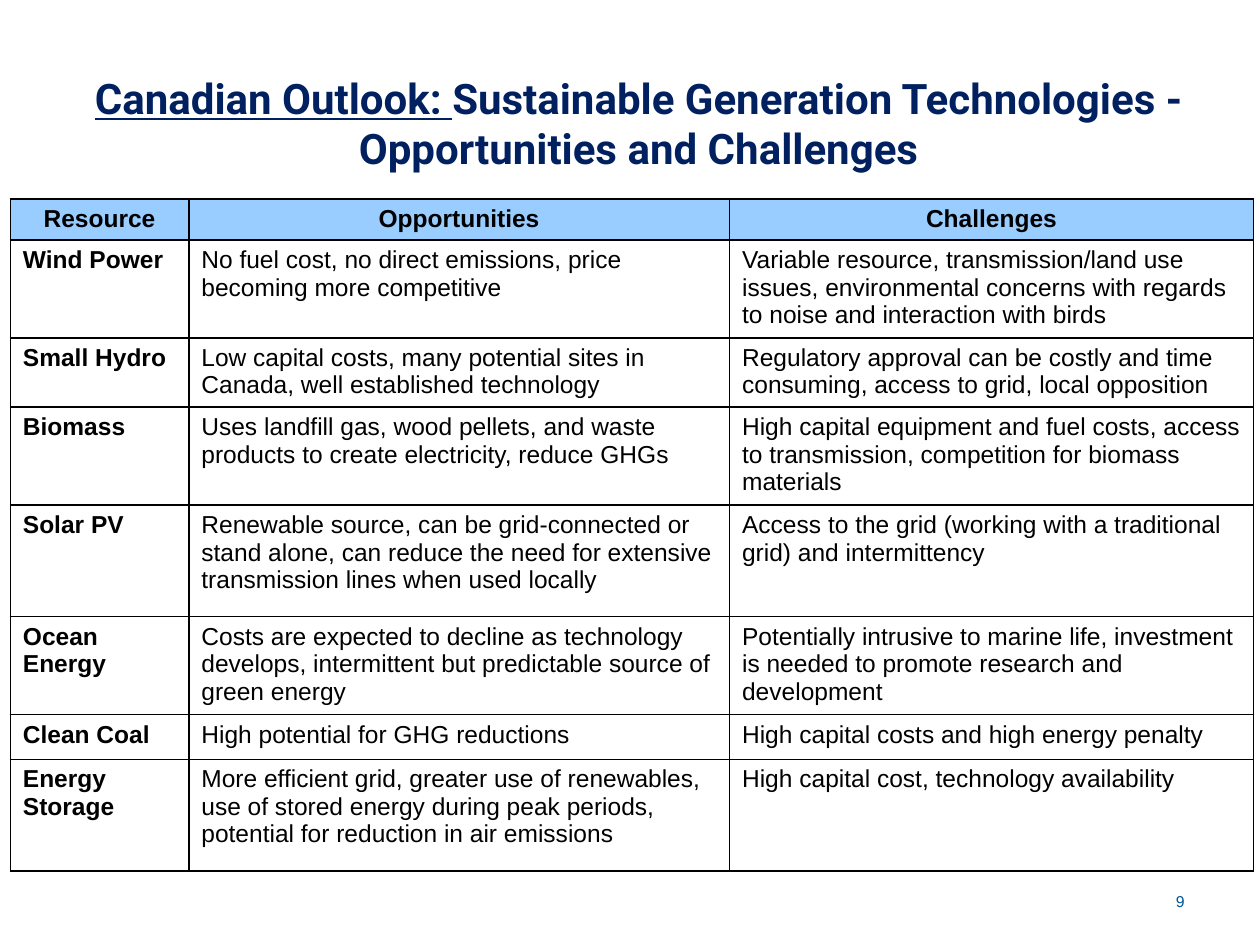
"""Build a slide with a table of sustainable generation technologies."""
from pptx import Presentation, util as u
from pptx.dml.color import RGBColor
from pptx.enum import text as t
from pptx.oxml import parse_xml
from pptx.oxml.ns import nsdecls

Pt = u.Pt
THEME = {
    "navy": "002060", "blue": "005595", "black": "000000", "head": "99CCFF",
    "sans": "Arial", "display": "Roboto",
    "title": 24, "body": 14, "small": 9, "line": 1,
}
LEAD = "Canadian Outlook: "
TITLE = ("Sustainable Generation Technologies -", "Opportunities and Challenges")
PAGE = "9"
HEAD = ("Resource", "Opportunities", "Challenges")
ROWS = [
    ("Wind Power",
     "No fuel cost, no direct emissions, price becoming more competitive",
     "Variable resource, transmission/land use issues, environmental concerns "
     "with regards to noise and interaction with birds"),
    ("Small Hydro",
     "Low capital costs, many potential sites in Canada, well established technology",
     "Regulatory approval can be costly and time consuming, access to grid, "
     "local opposition"),
    ("Biomass",
     "Uses landfill gas, wood pellets, and waste products to create electricity, "
     "reduce GHGs",
     "High capital equipment and fuel costs, access to transmission, competition "
     "for biomass materials"),
    ("Solar PV",
     "Renewable source, can be grid-connected or stand alone, can reduce the need "
     "for extensive transmission lines when used locally",
     "Access to the grid (working with a traditional grid) and intermittency"),
    ("Ocean Energy",
     "Costs are expected to decline as technology develops, intermittent but "
     "predictable source of green energy",
     "Potentially intrusive to marine life, investment is needed to promote "
     "research and development"),
    ("Clean Coal",
     "High potential for GHG reductions",
     "High capital costs and high energy penalty"),
    ("Energy Storage",
     "More efficient grid, greater use of renewables, use of stored energy during "
     "peak periods, potential for reduction in air emissions",
     "High capital cost, technology availability"),
]
WIDTHS = (102, 309, 299.5)
HEIGHTS = (23.3, 56, 39.5, 56, 63.8, 56, 25.6, 63.8)


def write(para, words, size="body", font="sans", color="black", bold=False,
          line=False, align=t.PP_ALIGN.LEFT):
    """Add a formatted run to a paragraph."""
    para.alignment = align
    run = para.add_run()
    run.text = words
    face = run.font
    face.name, face.size = THEME[font], Pt(THEME[size])
    face.bold, face.underline = bold, line
    face.color.rgb = RGBColor.from_string(THEME[color])


def place(shape, left, top, width, height):
    """Set the box of a shape in points."""
    shape.left, shape.top = Pt(left), Pt(top)
    shape.width, shape.height = Pt(width), Pt(height)


def border(cell):
    """Draw a thin line on each side of a cell."""
    props = cell._tc.get_or_add_tcPr()
    for side in "LRTB":
        props.append(parse_xml(
            f'<a:ln{side} {nsdecls("a")} w="{Pt(THEME["line"])}"><a:solidFill>'
            f'<a:srgbClr val="{THEME["black"]}"/></a:solidFill></a:ln{side}>'))


def add_title(slide):
    """Fill the title placeholder."""
    shape = slide.shapes.title
    place(shape, 21.6, 41.8, 698.4, 56.9)
    frame = shape.text_frame
    frame.auto_size = t.MSO_AUTO_SIZE.NONE
    frame.vertical_anchor = t.MSO_ANCHOR.MIDDLE
    frame.margin_right = Pt(19)
    para = frame.paragraphs[0]
    look = dict(size="title", font="display", color="navy", bold=True,
                align=t.PP_ALIGN.CENTER)
    write(para, LEAD, line=True, **look)
    write(para, TITLE[0], **look)
    para.add_line_break()
    write(para, TITLE[1], **look)


def add_grid(slide):
    """Add the table of resources."""
    data = [HEAD, *ROWS]
    grid = slide.shapes.add_table(
        len(data), len(HEAD), Pt(5.9), Pt(113.8),
        Pt(sum(WIDTHS)), Pt(sum(HEIGHTS))).table
    grid.first_row = grid.horz_banding = False
    for col, width in zip(grid.columns, WIDTHS):
        col.width = Pt(width)
    for r, (row, height) in enumerate(zip(data, HEIGHTS)):
        grid.rows[r].height = Pt(height)
        for c, words in enumerate(row):
            cell = grid.cell(r, c)
            border(cell)
            if r == 0:
                cell.fill.solid()
                cell.fill.fore_color.rgb = RGBColor.from_string(THEME["head"])
            else:
                cell.fill.background()
            write(cell.text_frame.paragraphs[0], words, bold=r == 0 or c == 0,
                  align=t.PP_ALIGN.LEFT if r else t.PP_ALIGN.CENTER)


def add_page(slide):
    """Add the page number."""
    box = slide.shapes.add_textbox(Pt(516.2), Pt(500.4), Pt(167.8), Pt(28.8))
    frame = box.text_frame
    frame.word_wrap = True
    frame.vertical_anchor = t.MSO_ANCHOR.MIDDLE
    write(frame.paragraphs[0], PAGE, size="small", color="blue",
          align=t.PP_ALIGN.RIGHT)


def main():
    """Build and save the deck."""
    deck = Presentation()
    deck.slide_width, deck.slide_height = Pt(720), Pt(540)
    slide = deck.slides.add_slide(deck.slide_layouts[5])
    add_title(slide)
    add_grid(slide)
    add_page(slide)
    deck.save("out.pptx")


if __name__ == "__main__":
    main()
